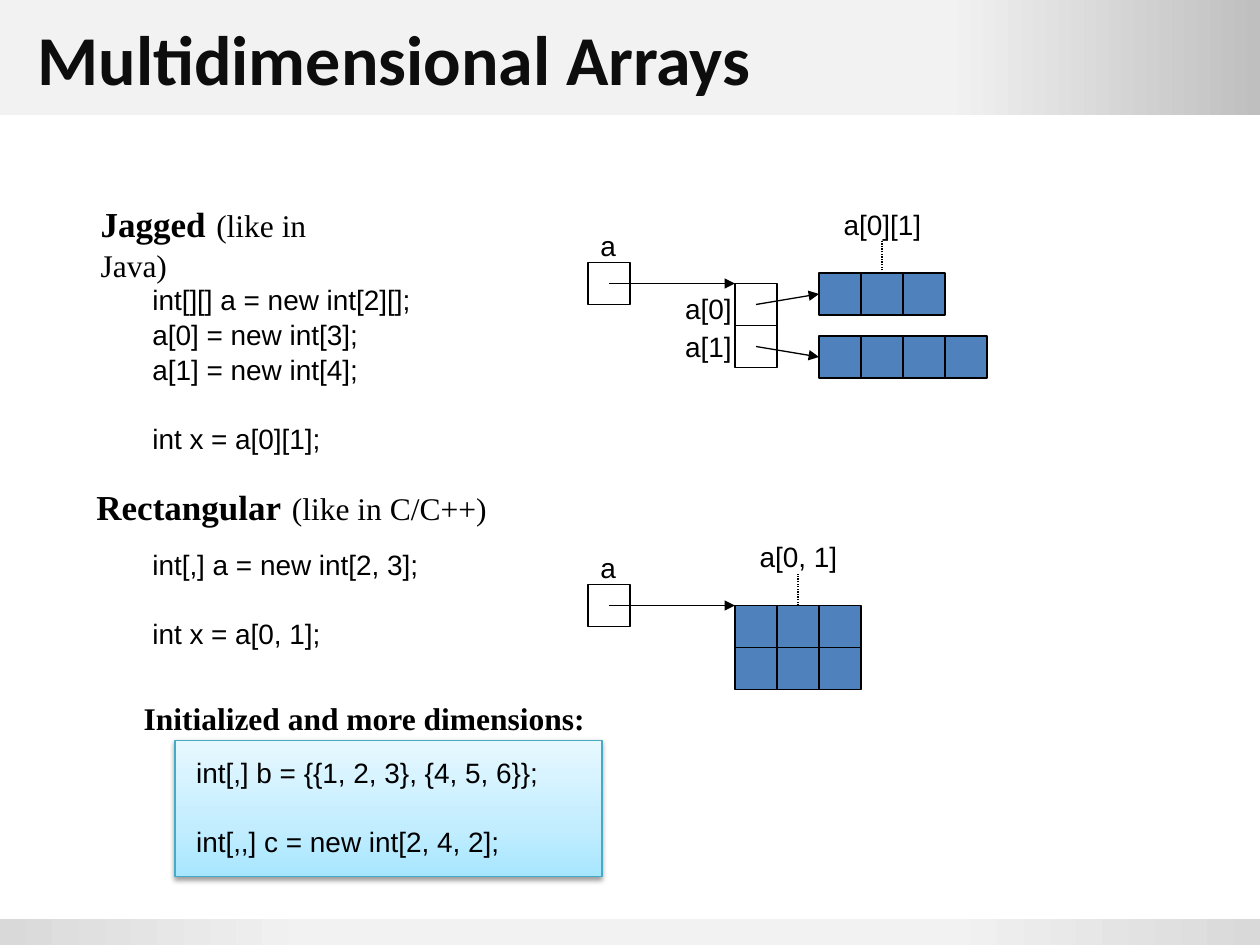
from copy import deepcopy

from lxml.etree import SubElement
from pptx import Presentation
from pptx.dml.color import RGBColor
from pptx.enum.dml import MSO_LINE
from pptx.enum.shapes import MSO_CONNECTOR, MSO_SHAPE
from pptx.enum.text import MSO_ANCHOR, MSO_AUTO_SIZE as AutoSize
from pptx.oxml.ns import qn
from pptx.util import Pt

COLORS = {
    "black": "000000", "title": "0D0D0D", "array": "4F81BD",
    "band": "F2F2F2", "band_end": "BFBFBF", "footer_end": "D9D9D9",
    "code_low": "A7E6FF", "code_mid": "C1EDFF", "code_high": "E7F8FF",
    "code_edge": "46AAC5",
}
TITLE = {"name": "Calibri", "size": Pt(40), "bold": True}
CODE = {"name": "Arial", "size": Pt(16), "bold": False}
HEADING = {"name": "Times New Roman", "size": Pt(20), "bold": True}
HEADING_GAP = {**HEADING, "size": Pt(24), "bold": False}
NOTE = {**HEADING, "size": Pt(18), "bold": False}
SUBHEADING = {**NOTE, "bold": True}

CELL = 24
CODE_LINE = 19.2
CODE_SPACING = 1.05


def rgb(color):
    return RGBColor.from_string(COLORS[color])


def add_run(paragraph, text, style, color="black"):
    run = paragraph.add_run()
    run.text = text
    for attribute, value in style.items():
        setattr(run.font, attribute, value)
    run.font.color.rgb = rgb(color)


def add_text_frame(slide, left, top, width, height, wrap=False):
    box = slide.shapes.add_textbox(Pt(left), Pt(top), Pt(width), Pt(height))
    frame = box.text_frame
    frame.word_wrap = wrap
    frame.auto_size = AutoSize.SHAPE_TO_FIT_TEXT
    return frame


def add_code(slide, left, top, width, height, lines):
    """Lines are (gap before, text) pairs."""
    frame = add_text_frame(slide, left, top, width, height)
    for index, (gap, text) in enumerate(lines):
        paragraph = frame.add_paragraph() if index else frame.paragraphs[0]
        paragraph.line_spacing = CODE_SPACING
        if gap:
            paragraph.space_before = Pt(gap)
        add_run(paragraph, text, CODE)


def add_heading(slide, left, top, width, title, note, wrap=False):
    paragraph = add_text_frame(slide, left, top, width, 36, wrap).paragraphs[0]
    for text, style in ((title, HEADING), (" ", HEADING_GAP), (note, NOTE)):
        add_run(paragraph, text, style)


def add_label(slide, left, top, width, text):
    add_code(slide, left, top, width, 26.6, [(0, text)])


def add_rectangle(slide, left, top, width, height, line=None):
    rectangle = slide.shapes.add_shape(
        MSO_SHAPE.RECTANGLE, Pt(left), Pt(top), Pt(width), Pt(height))
    rectangle.shadow.inherit = False
    if line:
        rectangle.line.color.rgb = rgb(line)
        rectangle.line.width = Pt(0.75)
    else:
        rectangle.line.fill.background()
    return rectangle


def fill_gradient(shape, stops, angle=0):
    shape.fill.gradient()
    shape.fill.gradient_angle = angle
    stop_list = shape._element.spPr.find(qn("a:gradFill")).find(qn("a:gsLst"))
    while len(stop_list) < len(stops):
        stop_list.append(deepcopy(stop_list[0]))
    for stop, (position, color) in zip(shape.fill.gradient_stops, stops):
        stop.position = position
        stop.color.rgb = rgb(color)


def add_soft_shadow(shape):
    effects = shape._element.spPr.find(qn("a:effectLst"))
    shadow = SubElement(effects, qn("a:outerShdw"), blurRad=str(Pt(3.1)),
                        dist=str(Pt(1.6)), dir="5400000", rotWithShape="0")
    color = SubElement(shadow, qn("a:srgbClr"), val=COLORS["black"])
    SubElement(color, qn("a:alpha"), val="38000")


def add_cells(slide, left, top, columns, rows=1, fill=None):
    """Draw a grid of array cells and return them row by row."""
    cells = []
    for index in range(rows * columns):
        row, column = divmod(index, columns)
        cell = add_rectangle(slide, left + column * CELL, top + row * CELL,
                             CELL, CELL, "black")
        if fill:
            cell.fill.solid()
            cell.fill.fore_color.rgb = rgb(fill)
        else:
            cell.fill.background()
        cells.append(cell)
    return cells


def add_line(slide, start, end):
    line = slide.shapes.add_connector(
        MSO_CONNECTOR.STRAIGHT, *(Pt(value) for value in (*start, *end)))
    line.line.color.rgb = rgb("black")
    line.line.width = Pt(0.75)
    SubElement(line._element.spPr, qn("a:effectLst"))
    return line


def add_arrow(slide, start, end, target=None):
    arrow = add_line(slide, start, end)
    SubElement(arrow.line._get_or_add_ln(), qn("a:tailEnd"), type="triangle")
    if target is not None:
        arrow.end_connect(target, 1)


def add_leader(slide, cell, x, top):
    leader = add_line(slide, (x, top), (x, top - 18))
    leader.line.dash_style = MSO_LINE.ROUND_DOT
    leader.begin_connect(cell, 0)


def add_bands(slide):
    header = add_rectangle(slide, 0, 0, 720, 66)
    fill_gradient(header, [(0.75, "band"), (1, "band_end")])
    footer = add_rectangle(slide, 0, 525, 720, 15)
    fill_gradient(footer, [(0, "footer_end"), (0.25, "band"),
                           (0.75, "band"), (1, "footer_end")])
    title = add_text_frame(slide, 14.4, 0, 692, 66, wrap=True)
    title.auto_size = AutoSize.NONE
    title.vertical_anchor = MSO_ANCHOR.MIDDLE
    add_run(title.paragraphs[0], "Multidimensional Arrays", TITLE, "title")


def add_variable(slide, top):
    """Draw variable a with its reference to the array."""
    add_label(slide, 336, top - 24, 23, "a")
    add_cells(slide, 336, top, 1)
    add_arrow(slide, (348, top + 12), (420, top + 12))


def add_jagged(slide):
    add_heading(slide, 50.4, 108, 174, "Jagged", "(like in Java)")
    add_code(slide, 80, 157, 163.4, 103.7, [
        (0, "int[][] a = new int[2][];"), (0, "a[0] = new int[3];"),
        (0, "a[1] = new int[4];"), (CODE_LINE, "int x = a[0][1];")])
    add_variable(slide, 150)
    add_cells(slide, 420, 162, 1, rows=2)
    for index, (columns, row_top) in enumerate(((3, 156), (4, 192))):
        row = add_cells(slide, 468, row_top, columns, fill="array")
        add_arrow(slide, (432, 174 + index * CELL), (468, row_top + 12), row[0])
        add_label(slide, 384.5, 162 + index * 21.6, 41, f"a[{index}]")
        if index == 0:
            add_leader(slide, row[1], 504, row_top)
    add_label(slide, 475, 114, 59, "a[0][1]")


def add_rectangular(slide):
    add_heading(slide, 48, 270, 672, "Rectangular", "(like in C/C++)", wrap=True)
    add_code(slide, 80, 308.5, 167.8, 65, [
        (0, "int[,] a = new int[2, 3];"), (CODE_LINE, "int x = a[0, 1];")])
    add_variable(slide, 334)
    cells = add_cells(slide, 420, 346, 3, rows=2, fill="array")
    add_label(slide, 427, 304, 59, "a[0, 1]")
    add_leader(slide, cells[1], 456, 346)


def add_initialized(slide):
    panel = add_rectangle(slide, 100, 423, 244, 78, "code_edge")
    fill_gradient(panel, [(0, "code_low"), (0.35, "code_mid"),
                          (1, "code_high")], angle=90)
    add_soft_shadow(panel)
    frame = add_text_frame(slide, 75, 396, 269, 95)
    add_run(frame.paragraphs[0], "Initialized and more dimensions:", SUBHEADING)
    for gap, code in ((9.6, "int[,] b = {{1, 2, 3}, {4, 5, 6}};"),
                      (CODE_LINE, "int[,,] c = new int[2, 4, 2];")):
        paragraph = frame.add_paragraph()
        paragraph._p.get_or_add_pPr().set("marL", str(Pt(30)))
        paragraph.line_spacing = CODE_SPACING
        paragraph.space_before = Pt(gap)
        add_run(paragraph, code, CODE)


def main():
    deck = Presentation()
    deck.slide_width, deck.slide_height = Pt(720), Pt(540)
    slide = deck.slides.add_slide(deck.slide_layouts[6])
    add_bands(slide)
    add_jagged(slide)
    add_rectangular(slide)
    add_initialized(slide)
    deck.save("out.pptx")


if __name__ == "__main__":
    main()
